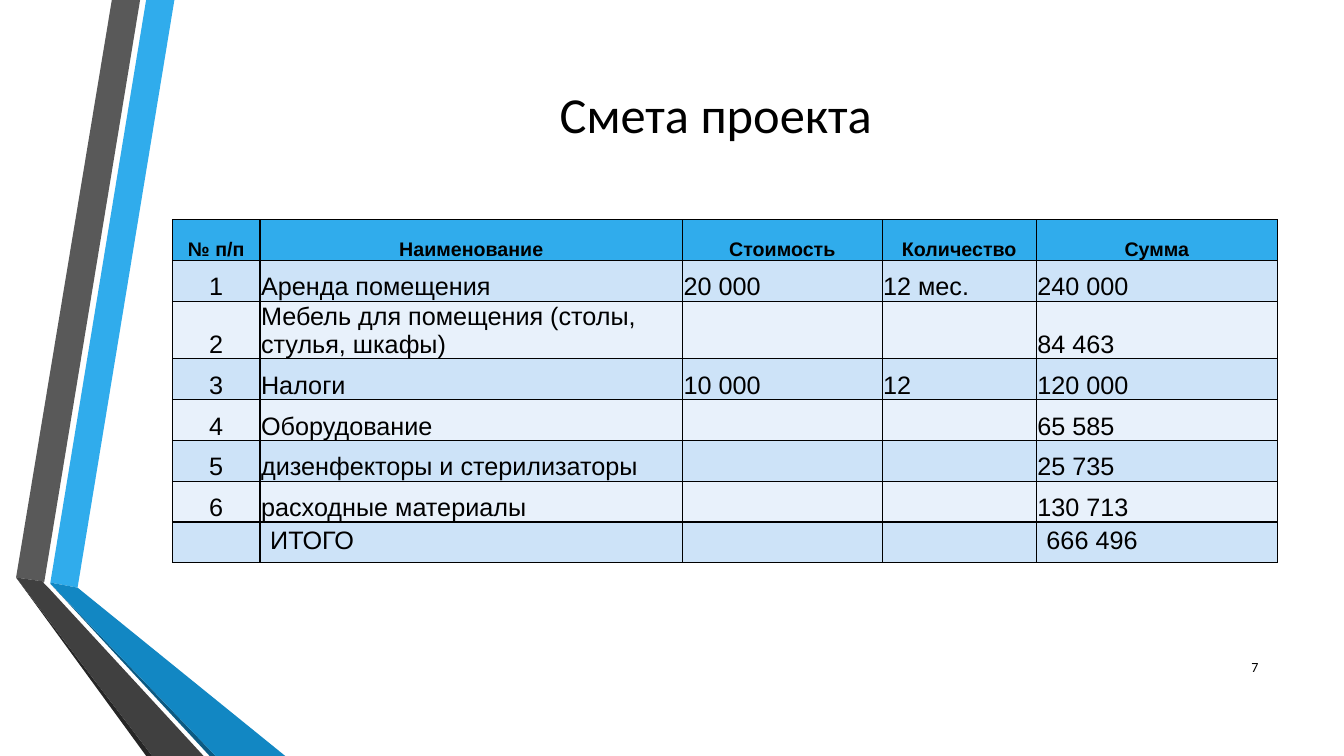
import lxml.etree
import pptx
import pptx.dml.color
import pptx.enum.text
import pptx.oxml.ns
import pptx.util

Inches = pptx.util.Inches
Pt = pptx.util.Pt
ALIGN = pptx.enum.text.PP_ALIGN
ANCHOR = pptx.enum.text.MSO_ANCHOR
qn = pptx.oxml.ns.qn


def set_fill(fill, color):
    fill.solid()
    fill.fore_color.rgb = pptx.dml.color.RGBColor.from_string(color)


def format_paragraph(paragraph, font_name, size, alignment, bold=False):
    paragraph.alignment = alignment
    paragraph.font.name = font_name
    paragraph.font.size = Pt(size)
    paragraph.font.bold = bold
    set_fill(paragraph.font.fill, "000000")


presentation = pptx.Presentation()
presentation.slide_width = Inches(13.33)
presentation.slide_height = Inches(7.5)
slide = presentation.slides.add_slide(presentation.slide_layouts[5])

# Folded ribbons along the left edge
ribbons = [
    ("30ACEC", [(0.5, 5.78), (0.77, 5.83), (1.73, 0), (1.45, 0)]),
    ("595959", [(1.39, 0), (1.11, 0), (0.16, 5.73), (0.44, 5.77)]),
    ("262626", [(0.16, 5.73), (1.45, 7.5), (1.51, 7.5)]),
    ("0C5A82", [(0.5, 5.79), (2.08, 7.5), (2.14, 7.5)]),
    ("1287C3", [(0.5, 5.78), (0.5, 5.79), (2.14, 7.5), (2.83, 7.5), (0.77, 5.83)]),
    ("404040", [(2.02, 7.5), (0.48, 5.83), (0.43, 5.78), (0.44, 5.77), (0.16, 5.73), (1.51, 7.5)]),
]
for color, corners in ribbons:
    points = [(Inches(x), Inches(y)) for x, y in corners]
    builder = slide.shapes.build_freeform(*points[0])
    builder.add_line_segments(points[1:], close=True)
    ribbon = builder.convert_to_shape()
    ribbon.shadow.inherit = False
    set_fill(ribbon.fill, color)
    ribbon.line.fill.background()

title = slide.shapes.title
title.left, title.top = Inches(1.62), Inches(0.75)
title.width, title.height = Inches(10.96), Inches(0.74)
title.text_frame.text = "Смета проекта"
title.text_frame.vertical_anchor = ANCHOR.MIDDLE
format_paragraph(title.text_frame.paragraphs[0], "Calibri", 36, ALIGN.CENTER)

# Budget table
budget = [
    ["№ п/п", "Наименование", "Стоимость", "Количество", "Сумма"],
    ["1", "Аренда помещения", "20 000", "12 мес.", "240 000"],
    ["2", "Мебель для помещения (столы, стулья, шкафы)", "", "", "84 463"],
    ["3", "Налоги", "10 000", "12", "120 000"],
    ["4", "Оборудование", "", "", "65 585"],
    ["5", "дизенфекторы и стерилизаторы", "", "", "25 735"],
    ["6", "расходные материалы", "", "", "130 713"],
    ["", "ИТОГО", "", "", "666 496"],
]
column_widths = [0.87, 4.19, 1.98, 1.53, 2.39]
row_height = 0.405
total_row = len(budget) - 1
table = slide.shapes.add_table(
    len(budget), len(column_widths), Inches(1.71), Inches(2.18),
    Inches(sum(column_widths)), Inches(row_height * len(budget)),
).table
for column, width in zip(table.columns, column_widths):
    column.width = Inches(width)

for row_index, values in enumerate(budget):
    table.rows[row_index].height = Inches(row_height)
    is_header = row_index == 0
    row_color = "30ACEC" if is_header else ("E8F1FB", "CDE3F8")[row_index % 2]
    for column_index, value in enumerate(values):
        cell = table.cell(row_index, column_index)
        cell.text = value
        if row_index < total_row:
            cell.vertical_anchor = ANCHOR.BOTTOM
            cell.margin_left = cell.margin_right = cell.margin_top = Inches(0.01)
            cell.margin_bottom = 0
        centered = is_header or column_index == 0
        format_paragraph(
            cell.text_frame.paragraphs[0], "Arial", 14 if is_header else 18,
            ALIGN.CENTER if centered else ALIGN.LEFT, is_header,
        )
        properties = cell._tc.get_or_add_tcPr()
        for side in ("a:lnL", "a:lnR", "a:lnT", "a:lnB"):
            border = lxml.etree.SubElement(properties, qn(side), w=str(Pt(1)))
            border_fill = lxml.etree.SubElement(border, qn("a:solidFill"))
            lxml.etree.SubElement(border_fill, qn("a:srgbClr"), val="000000")
        set_fill(cell.fill, row_color)

page_number = slide.shapes.add_textbox(Inches(11.98), Inches(6.42), Inches(0.6), Inches(0.4))
page_number.text_frame.word_wrap = True
page_number.text_frame.vertical_anchor = ANCHOR.MIDDLE
page_number.text_frame.text = "7"
format_paragraph(page_number.text_frame.paragraphs[0], "Calibri", 10, ALIGN.RIGHT)

presentation.save("out.pptx")
